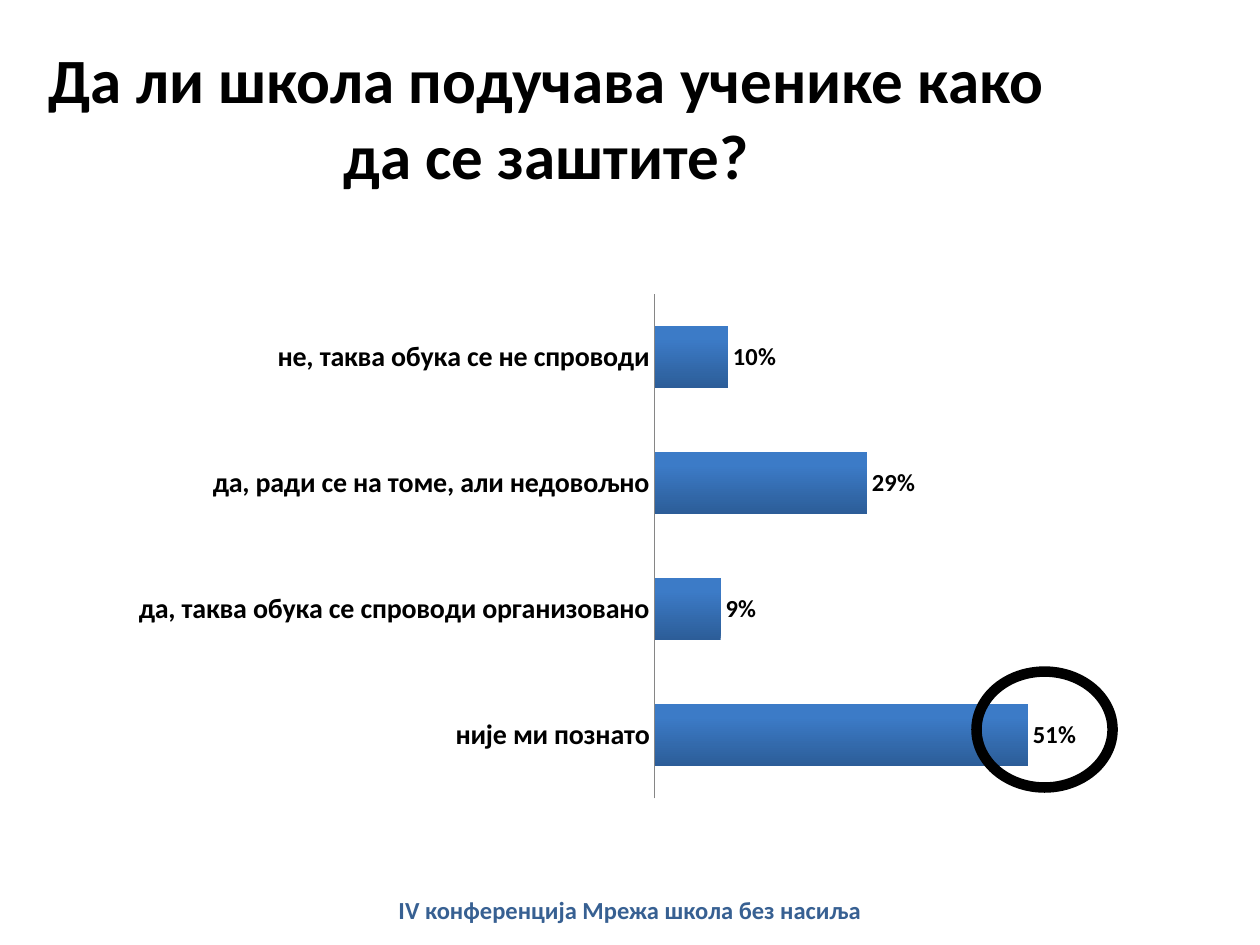
from lxml.etree import fromstring
from pptx import Presentation
from pptx.chart.data import CategoryChartData
from pptx.dml.color import RGBColor
from pptx.enum.chart import XL_CHART_TYPE, XL_LABEL_POSITION, XL_TICK_MARK
from pptx.enum.shapes import MSO_SHAPE
from pptx.enum.text import MSO_ANCHOR, PP_ALIGN
from pptx.util import Inches, Pt

TITLE = "Да ли школа подучава ученике како да се заштите?"
FOOTER = "IV конференција Мрежа школа без насиља"
ANSWERS = [
    ("није ми познато", 0.51),
    ("да, таква обука се спроводи организовано", 0.09),
    ("да, ради се на томе, али недовољно", 0.29),
    ("не, таква обука се не спроводи", 0.10),
]
THEME = {
    "font": "Calibri",
    "text": RGBColor.from_string("000000"),
    "footer": RGBColor.from_string("376092"),
    "axis": RGBColor.from_string("868686"),
    "bar": [(0, RGBColor.from_string("2C5D98")), (0.8, RGBColor.from_string("3C7BC7"))],
    "title_size": 36,
    "category_size": 16,
    "label_size": 14,
    "base_size": 10,
}
PLOT_LAYOUT = {"x": 0.54, "y": 0.02, "w": 0.44, "h": 0.96}
CHART_NAMESPACE = "http://schemas.openxmlformats.org/drawingml/2006/chart"


def set_values(target, values):
    for name, value in values.items():
        setattr(target, name, value)


def style_font(font, size, color=THEME["text"], bold=True):
    set_values(font, {"name": THEME["font"], "size": Pt(size), "bold": bold})
    font.color.rgb = color


def add_text(slide, box, text, size, color, frame_values):
    frame = slide.shapes.add_textbox(*map(Inches, box)).text_frame
    set_values(frame, {"word_wrap": True, **frame_values})
    paragraph = frame.paragraphs[0]
    set_values(paragraph, {"text": text, "alignment": PP_ALIGN.CENTER})
    style_font(paragraph.runs[0].font, size, color)


def set_plot_layout(chart):
    plot_area = chart.plots[0]._element.getparent()
    for layout in plot_area.findall(f"{{{CHART_NAMESPACE}}}layout"):
        plot_area.remove(layout)
    modes = '<c:layoutTarget val="inner"/><c:xMode val="edge"/><c:yMode val="edge"/>'
    sizes = "".join(f'<c:{name} val="{value}"/>' for name, value in PLOT_LAYOUT.items())
    plot_area.insert(0, fromstring(
        f'<c:layout xmlns:c="{CHART_NAMESPACE}"><c:manualLayout>{modes}{sizes}'
        "</c:manualLayout></c:layout>"))


def add_answer_chart(slide, box):
    data = CategoryChartData(number_format="0%")
    data.categories = [answer for answer, share in ANSWERS]
    data.add_series("Series 1", [share for answer, share in ANSWERS])
    chart = slide.shapes.add_chart(
        XL_CHART_TYPE.BAR_CLUSTERED, *map(Inches, box), data).chart
    set_values(chart, {"has_legend": False, "has_title": False})
    style_font(chart.font, THEME["base_size"], bold=False)

    plot = chart.plots[0]
    set_values(plot, {"gap_width": 104, "overlap": -25,
                      "vary_by_categories": False, "has_data_labels": True})
    set_values(plot.data_labels, {
        "show_value": True, "number_format": "0%",
        "number_format_is_linked": False, "position": XL_LABEL_POSITION.OUTSIDE_END})
    style_font(plot.data_labels.font, THEME["label_size"])

    fill = plot.series[0].format.fill
    fill.gradient()
    fill.gradient_angle = 90
    for stop, (position, color) in zip(fill.gradient_stops, THEME["bar"]):
        stop.position = position
        stop.color.rgb = color

    category_axis = chart.category_axis
    set_values(category_axis, {"major_tick_mark": XL_TICK_MARK.NONE,
                               "has_major_gridlines": False})
    style_font(category_axis.tick_labels.font, THEME["category_size"])
    category_axis.format.line.color.rgb = THEME["axis"]
    set_values(chart.value_axis, {"visible": False, "has_major_gridlines": False,
                                  "minimum_scale": 0, "maximum_scale": 0.6})
    set_plot_layout(chart)


def add_highlight(slide, box):
    ellipse = slide.shapes.add_shape(MSO_SHAPE.OVAL, *map(Inches, box))
    ellipse.shadow.inherit = False
    ellipse.fill.background()
    ellipse.line.color.rgb = THEME["text"]
    ellipse.line.width = Pt(6)


def main():
    presentation = Presentation()
    set_values(presentation, {"slide_width": Inches(10), "slide_height": Inches(7.5)})
    slide = presentation.slides.add_slide(presentation.slide_layouts[6])
    add_answer_chart(slide, (0.92, 2.25, 7.92, 4.17))
    add_text(slide, (0.17, 0.3, 8.33, 1.25), TITLE, THEME["title_size"],
             THEME["text"], {"vertical_anchor": MSO_ANCHOR.MIDDLE})
    add_text(slide, (0, 7.1, 10, 0.4), FOOTER, THEME["label_size"],
             THEME["footer"], {"vertical_anchor": MSO_ANCHOR.TOP, "margin_top": 0})
    add_highlight(slide, (7.75, 5.33, 1.08, 0.92))
    presentation.save("out.pptx")


if __name__ == "__main__":
    main()
